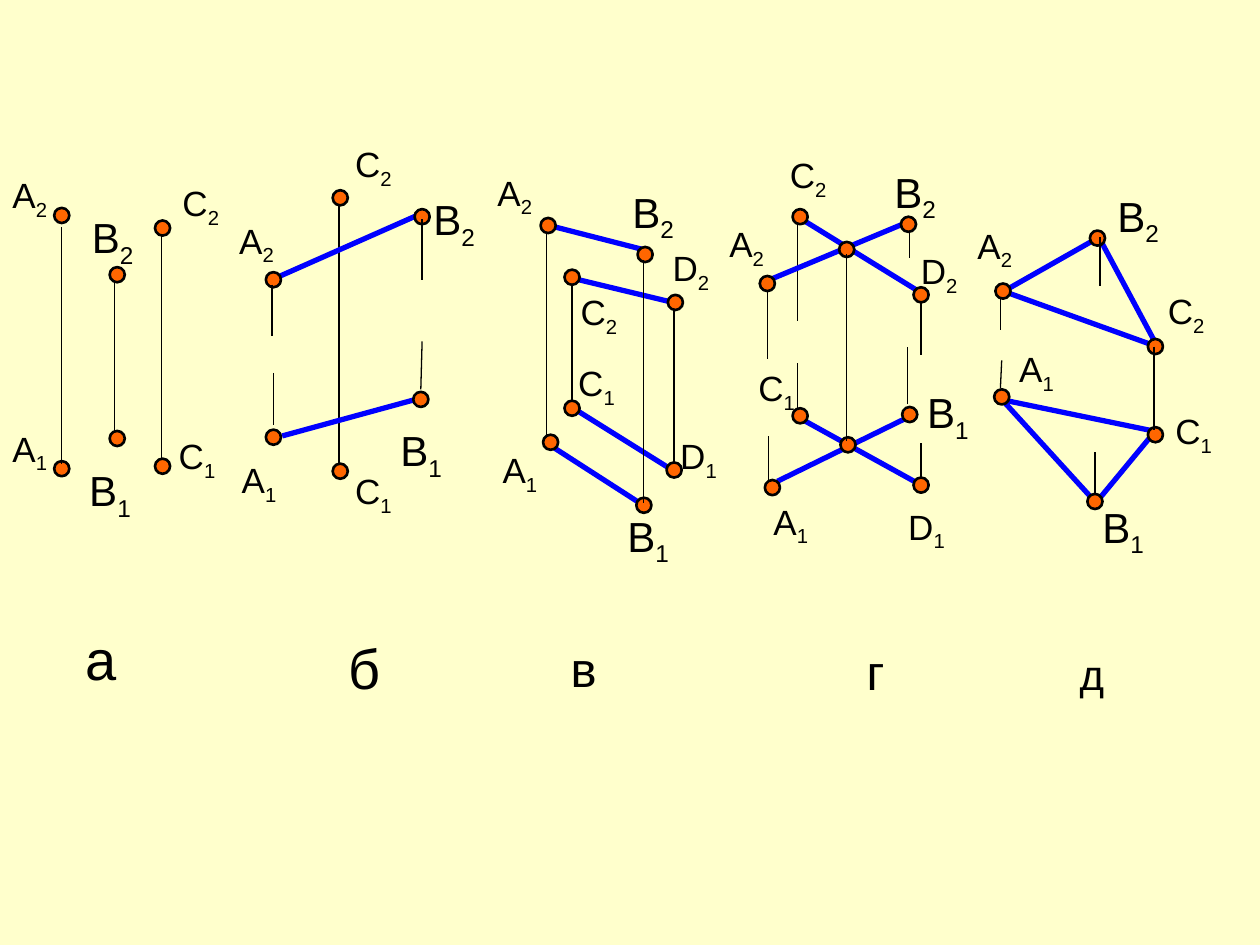
from lxml.etree import SubElement
from pptx import Presentation
from pptx.dml.color import RGBColor
from pptx.enum.shapes import MSO_CONNECTOR as CONN, MSO_SHAPE as SHAPE
from pptx.enum.text import MSO_AUTO_SIZE as FIT
from pptx.oxml.ns import qn
from pptx.util import Inches, Pt

CREAM = RGBColor(0xFF, 0xFF, 0xCC)
ORANGE = RGBColor(0xFF, 0x66, 0x00)
BLUE = RGBColor(0x00, 0x00, 0xFF)
BLACK = RGBColor(0x00, 0x00, 0x00)
COLS, ROWS = 100, 75
DOT = 1.2

BACK_PROJECTIONS = [
    (60.9, 22.8, 60.9, 28.5), (61, 38.5, 61, 34.6), (63.3, 17.4, 63.3, 25.5),
    (73.1, 23.8, 73.1, 28.2), (73.1, 38.6, 73.1, 35.2),
    (45.4, 22.3, 45.4, 32.2), (43.4, 18.3, 43.4, 34.8),
    (53.5, 24.4, 53.5, 37), (26.9, 16.1, 26.9, 36.8),
]
SEGMENTS = [
    (79.7, 23.1, 87.1, 18.9), (87.2, 18.8, 91.8, 27.4), (91.8, 27.5, 79.6, 23.1),
    (79.6, 31.8, 86.8, 39.7), (86.9, 40, 91.7, 34.2), (91.5, 34.2, 79.4, 31.7),
    (61.7, 38.2, 71.9, 33.2), (61.1, 22.2, 72.1, 17.6),
    (63.3, 17.2, 73.2, 23.3), (63.5, 33.2, 73.1, 38.5),
    (43.6, 17.9, 51.4, 19.9), (45.5, 22.1, 53.4, 24),
    (45.5, 32.4, 53.5, 37.4), (43.6, 35.3, 50.9, 40),
    (21.8, 22.1, 33.1, 17.1), (22.4, 34.6, 33, 31.7),
]
POINTS = [
    (21.1, 21.6), (32.9, 16.6), (21.1, 34.1), (12.3, 36.4), (8.7, 34.2),
    (4.3, 36.6), (12.3, 17.5), (4.3, 16.5), (26.4, 15.1), (43.1, 34.5),
    (50.5, 39.5), (62.9, 16.6), (91.1, 33.9), (60.3, 21.9), (52.9, 36.7),
    (44.8, 31.8), (53, 23.4), (44.8, 21.4), (50.6, 19.6), (42.9, 17.3),
    (32.8, 31.1), (26.4, 36.8), (86.5, 18.3), (79, 22.5), (66.6, 19.2),
    (72.5, 37.9), (66.7, 34.7), (60.7, 38.1), (71.6, 32.3), (62.9, 32.4),
    (86.3, 39.2), (78.9, 30.9), (91.1, 26.9),
]
FRONT_PROJECTIONS = [
    (4.9, 18, 4.9, 36.8), (9.1, 22, 9.1, 34.4), (12.8, 18.7, 12.8, 36.5),
    (21.6, 22.6, 21.6, 26.7), (21.7, 29.6, 21.7, 33.7),
    (33.5, 17.4, 33.5, 22.2), (33.4, 30.9, 33.5, 27.1),
    (51.1, 20.6, 51.1, 39.9), (63.3, 32.4, 63.3, 28.8), (67.2, 35, 67.2, 20.2),
    (72.2, 17.3, 72.2, 20.5), (72, 32.1, 72, 27.5),
    (79.4, 23.6, 79.4, 26.2), (79.4, 30.8, 79.5, 28.6),
    (87.3, 18.8, 87.3, 22.7), (86.9, 39.3, 86.9, 35.9), (91.6, 27.5, 91.6, 34.1),
]
FRONT_POINTS = [(71.5, 17.2), (72.5, 22.8), (8.7, 21.2)]

LABELS = [
    ("A", "2", 20, 5, 4.3, True, [(0, 13.3), (56.9, 17.2), (76.6, 17.3), (18, 16.9), (38.5, 13.1)]),
    ("A", "1", 20, 5, 4.3, True, [(79.9, 27.1), (0, 33.4), (18.2, 35.9), (38.9, 35.1), (60.4, 39.2)]),
    ("В", "2", 24, 5.5, 5, False, [(49.2, 14.3), (6.3, 16.3), (70, 12.7), (87.7, 14.6), (33.4, 14.9)]),
    ("В", "1", 24, 5.5, 5, False, [(30.8, 33.2), (6.1, 36.4), (48.8, 40), (72.6, 30.2), (86.5, 39.3)]),
    ("D", "2", 20, 5.6, 4.3, True, [(52.4, 19.1), (72.1, 19.3)]),
    ("D", "1", 20, 5, 4.3, False, [(71.1, 39.6), (53, 34)]),
    ("C", "2", 20, 5, 4.3, False, [(27.2, 10.8), (13.5, 13.9), (61.7, 11.7), (45.1, 22.6), (91.7, 22.5)]),
    ("C", "1", 20, 6.2, 4.3, True, [(44.9, 28.2)]),
    ("C", "1", 20, 5, 4.3, False, [(27.2, 36.8), (13.2, 34), (92.3, 32), (59.2, 28.6)]),
    ("а", "", 32, 4.1, 6.3, False, [(5.8, 49.1)]),
    ("б", "", 32, 4.1, 6.3, False, [(26.7, 49.8)]),
    ("в", "", 28, 4.1, 5.7, False, [(44.3, 50.2)]),
    ("г", "", 28, 3.4, 5.7, False, [(67.8, 50.4)]),
    ("д", "", 24, 4, 5, False, [(84.7, 51)]),
]


class Drawing:
    font = "Arial"

    def __init__(self, prs):
        self.s = prs.slides.add_slide(prs.slide_layouts[6])
        self.col = prs.slide_width / COLS
        self.row = prs.slide_height / ROWS
        fill = self.s.background.fill
        fill.solid()
        fill.fore_color.rgb = CREAM

    def grid(self, *values):
        return [round(v * (self.row if i % 2 else self.col)) for i, v in enumerate(values)]

    def line(self, ends, color, width):
        c = self.s.shapes.add_connector(CONN.STRAIGHT, *self.grid(*ends))
        c.line.color.rgb = color
        c.line.width = Pt(width)
        SubElement(c._element.spPr, qn("a:effectLst"))

    def projection(self, ends):
        self.line(ends, BLACK, 0.75)

    def segment(self, ends):
        self.line(ends, BLUE, 3)

    def point(self, at):
        sp = self.s.shapes.add_shape(SHAPE.OVAL, *self.grid(*at, DOT, DOT))
        sp.shadow.inherit = False
        sp.fill.solid()
        sp.fill.fore_color.rgb = ORANGE
        sp.line.color.rgb = BLACK
        sp.line.width = Pt(1.5)

    def label(self, letter, index, size, w, h, wrap, at):
        tf = self.s.shapes.add_textbox(*self.grid(*at, w, h)).text_frame
        tf.word_wrap = wrap
        tf.auto_size = FIT.SHAPE_TO_FIT_TEXT
        p = tf.paragraphs[0]
        self.run(p, letter, size)
        if index:
            r = self.run(p, index, size)
            r.font._element.set("baseline", "-25000")

    def run(self, p, text, size):
        r = p.add_run()
        r.text = text
        r.font.name = self.font
        r.font.size = Pt(size)
        r.font.color.rgb = BLACK
        return r


def main():
    prs = Presentation()
    prs.slide_width, prs.slide_height = Inches(10), Inches(7.5)
    d = Drawing(prs)
    layers = [
        (d.projection, BACK_PROJECTIONS),
        (d.segment, SEGMENTS),
        (d.point, POINTS),
        (d.projection, FRONT_PROJECTIONS),
        (d.point, FRONT_POINTS),
    ]
    for draw, items in layers:
        for item in items:
            draw(item)
    for *style, places in LABELS:
        for at in places:
            d.label(*style, at)
    prs.save("out.pptx")


if __name__ == "__main__":
    main()
